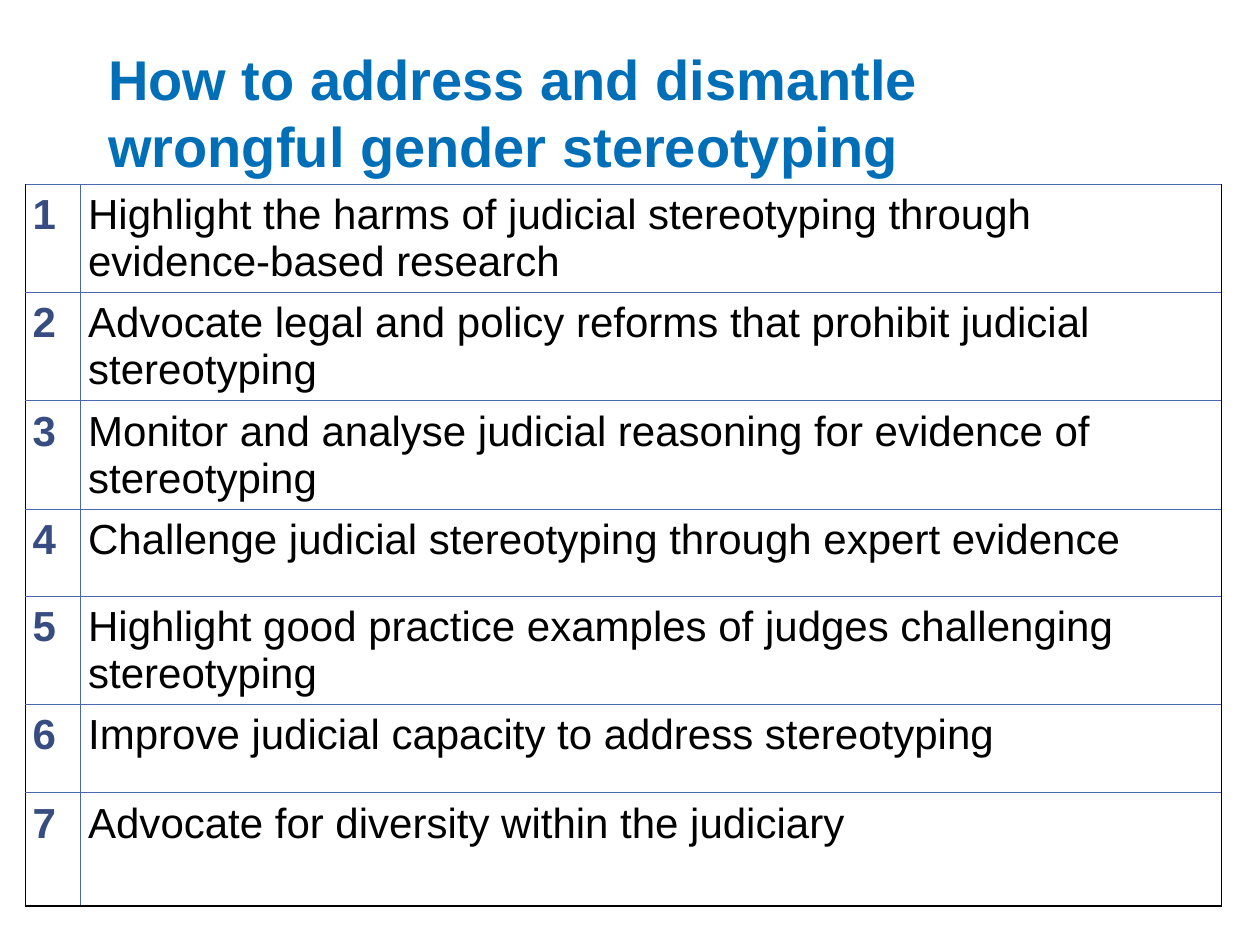
import pptx
import pptx.util
import pptx.dml.color
import pptx.enum.text
import pptx.oxml.ns
from lxml import etree

Inches = pptx.util.Inches
Pt = pptx.util.Pt
RGBColor = pptx.dml.color.RGBColor
MSO_ANCHOR = pptx.enum.text.MSO_ANCHOR
qn = pptx.oxml.ns.qn

TITLE_BLUE = RGBColor(0x00, 0x6F, 0xB7)
NUMBER_BLUE = RGBColor(0x37, 0x4C, 0x80)
RULE_BLUE = RGBColor(0x4A, 0x66, 0xAC)
BLACK = RGBColor(0x00, 0x00, 0x00)
WHITE = RGBColor(0xFF, 0xFF, 0xFF)

ACTIONS = [
    ("Highlight the harms of judicial stereotyping through evidence-based research", 0.86),
    ("Advocate legal and policy reforms that prohibit judicial stereotyping", 0.86),
    ("Monitor and analyse judicial reasoning for evidence of stereotyping", 0.86),
    ("Challenge judicial stereotyping through expert evidence", 0.69),
    ("Highlight good practice examples of judges challenging stereotyping", 0.86),
    ("Improve judicial capacity to address stereotyping", 0.7),
    ("Advocate for diversity within the judiciary", 0.9),
]


def write(tf, text, size=24, color=BLACK, bold=False):
    r = tf.paragraphs[0].add_run()
    r.text = text
    r.font.name = "Arial"
    r.font.size = Pt(size)
    r.font.bold = bold
    r.font.color.rgb = color


def add_border(cell, side, color, width):
    """Draw one cell edge; side is L, R, T or B, added in that order before the fill."""
    tcPr = cell._tc.get_or_add_tcPr()
    ln = etree.SubElement(tcPr, qn("a:ln" + side), w=str(Pt(width)))
    fill = etree.SubElement(ln, qn("a:solidFill"))
    etree.SubElement(fill, qn("a:srgbClr"), val=str(color))


prs = pptx.Presentation()
prs.slide_width = Inches(10)
prs.slide_height = Inches(7.5)
s = prs.slides.add_slide(prs.slide_layouts[6])

# Title
title = s.shapes.add_textbox(Inches(0.81), Inches(0.29), Inches(8.27), Inches(1.19))
tf = title.text_frame
tf.word_wrap = True
tf.vertical_anchor = MSO_ANCHOR.MIDDLE
tf.margin_left = tf.margin_right = tf.margin_top = tf.margin_bottom = Inches(0.05)
write(tf, "How to address and dismantle wrongful gender stereotyping",
      size=32, color=TITLE_BLUE, bold=True)

# Numbered actions
total_height = sum(height for _, height in ACTIONS)
table = s.shapes.add_table(len(ACTIONS), 2, Inches(0.2), Inches(1.46),
                           Inches(9.49), Inches(total_height)).table
table.first_row = False
table.horz_banding = False
table.columns[0].width = Inches(0.44)
table.columns[1].width = Inches(9.05)

last_row = len(ACTIONS) - 1
for row, (action, height) in enumerate(ACTIONS):
    table.rows[row].height = Inches(height)
    number_cell, action_cell = table.cell(row, 0), table.cell(row, 1)
    write(number_cell.text_frame, str(row + 1), color=NUMBER_BLUE, bold=True)
    write(action_cell.text_frame, action)
    for col, cell in enumerate((number_cell, action_cell)):
        cell.margin_left = cell.margin_right = cell.margin_top = Inches(0.06)
        cell.margin_bottom = 0
        add_border(cell, "L", RULE_BLUE if col == 1 else BLACK, 0.5)
        add_border(cell, "R", RULE_BLUE if col == 0 else BLACK, 0.5)
        add_border(cell, "T", RULE_BLUE, 0.5)
        if row == last_row:
            add_border(cell, "B", BLACK, 1)
        else:
            add_border(cell, "B", RULE_BLUE, 0.5)
        cell.fill.solid()
        cell.fill.fore_color.rgb = WHITE

prs.save("out.pptx")
